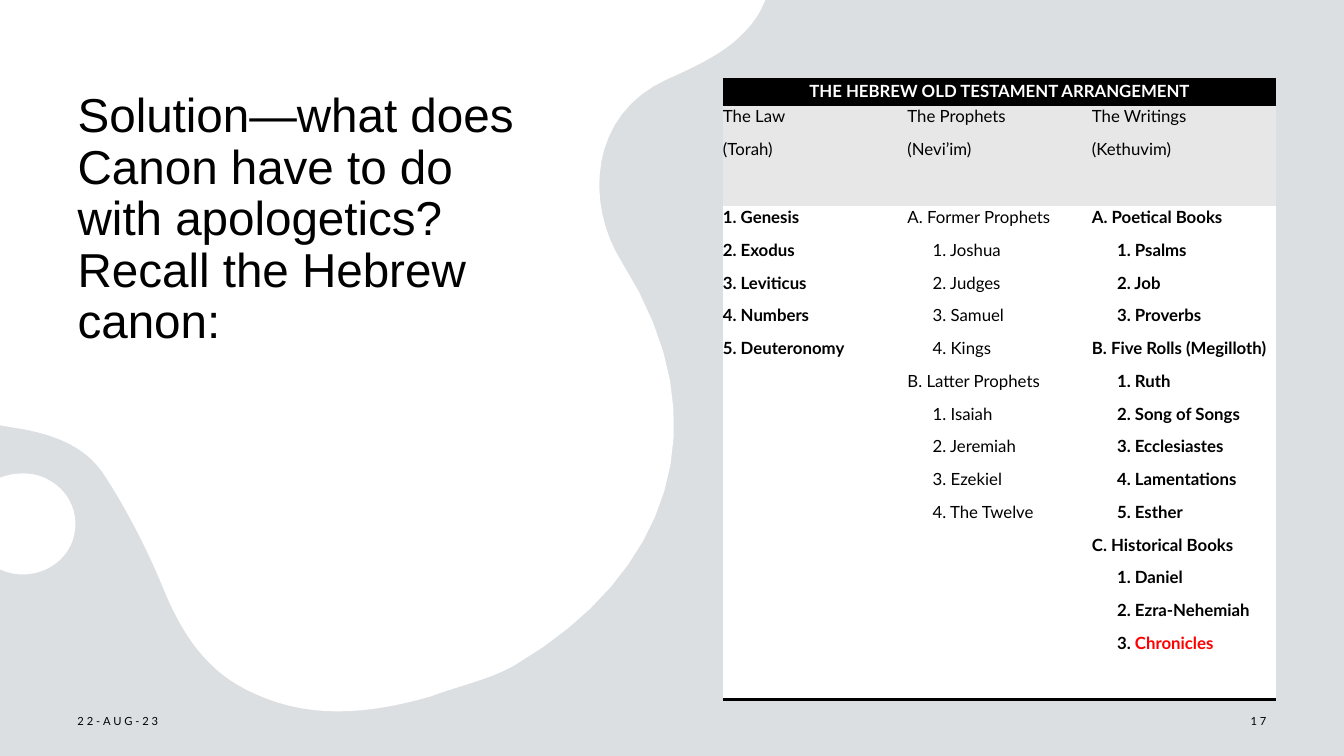
from lxml import etree
from pptx import Presentation
from pptx.dml.color import RGBColor
from pptx.enum.shapes import MSO_SHAPE
from pptx.enum.text import MSO_ANCHOR as ANCHOR, MSO_AUTO_SIZE as AUTO, PP_ALIGN as ALIGN
from pptx.oxml.ns import qn
from pptx.util import Pt

PX = 9144
W, H = 1333, 750
COLORS = {
    "ground": "E2E5E8", "veil": "AEAEAE", "white": "FFFFFF",
    "black": "000000", "band": "E7E7E7", "red": "FF0000",
}
NO_STYLE = "{2D5ABB26-0587-4C30-8999-92F81FD0307C}"

BLOB = [
    (0, 0), (759, 0), (754, 11),
    (750, 18, 745, 25, 739, 31), (720, 52, 690, 66, 663, 78),
    (583, 113, 581, 203, 616, 259), (720, 422, 661, 571, 512, 659),
    (487, 674, 456, 680, 427, 691), (364, 709, 302, 715, 242, 683),
    (204, 663, 182, 630, 165, 591), (148, 549, 127, 507, 102, 469),
    (84, 443, 55, 432, 24, 426), (0, 422),
]
DOT = [
    (18, 470), (29, 469, 39, 471, 48, 476), (74, 490, 82, 521, 68, 545),
    (55, 566, 29, 575, 5, 567), (0, 565), (0, 474), (6, 472),
    (10, 471, 14, 470, 18, 470),
]
DIVISIONS = [
    ("The Law", "(Torah)", True, [
        (None, ["Genesis", "Exodus", "Leviticus", "Numbers", "Deuteronomy"]),
    ]),
    ("The Prophets", "(Nevi’im)", False, [
        ("Former Prophets", ["Joshua", "Judges", "Samuel", "Kings"]),
        ("Latter Prophets", ["Isaiah", "Jeremiah", "Ezekiel", "The Twelve"]),
    ]),
    ("The Writings", "(Kethuvim)", True, [
        ("Poetical Books", ["Psalms", "Job", "Proverbs"]),
        ("Five Rolls (Megilloth)",
         ["Ruth", "Song of Songs", "Ecclesiastes", "Lamentations", "Esther"]),
        ("Historical Books", ["Daniel", "Ezra-Nehemiah", "Chronicles"]),
    ]),
]


def emu(*lengths):
    return [round(n * PX) for n in lengths]


def rgb(name):
    return RGBColor.from_string(COLORS[name])


def paint(s, name):
    s.fill.solid()
    s.fill.fore_color.rgb = rgb(name)
    s.line.fill.background()
    s.shadow.inherit = False


def add_run(p, text, size, color="black", bold=False, font="Lato"):
    r = p.add_run()
    r.text = text
    r.font.size, r.font.name, r.font.bold = Pt(size), font, bold
    r.font.color.rgb = rgb(color)
    return r


def flatten(outline, steps=16):
    points = [outline[0]]
    for seg in outline[1:]:
        if len(seg) == 2:
            points.append(seg)
            continue
        x0, y0 = points[-1]
        x1, y1, x2, y2, x3, y3 = seg
        for i in range(1, steps + 1):
            t = i / steps
            a, b, c, d = (1 - t) ** 3, 3 * t * (1 - t) ** 2, 3 * t * t * (1 - t), t ** 3
            points.append((a * x0 + b * x1 + c * x2 + d * x3,
                           a * y0 + b * y1 + c * y2 + d * y3))
    return [emu(*pt) for pt in points]


def add_backdrop(slide, x, y, w, h):
    slide.background.fill.solid()
    slide.background.fill.fore_color.rgb = rgb("ground")
    veil = slide.shapes.add_shape(MSO_SHAPE.RECTANGLE, *emu(x, y, w, h))
    paint(veil, "veil")
    color = veil.fill._xPr.find(qn("a:solidFill"))[0]
    etree.SubElement(color, qn("a:alpha")).set("val", "10000")
    blob, dot = flatten(BLOB), flatten(DOT)
    builder = slide.shapes.build_freeform(*blob[0])
    builder.add_line_segments(blob[1:])
    builder.move_to(*dot[0])
    builder.add_line_segments(dot[1:])
    paint(builder.convert_to_shape(*emu(x, y)), "white")


def add_title(slide, x, y, w, h):
    s = slide.shapes.title
    s.left, s.top, s.width, s.height = emu(x, y, w, h)
    tf = s.text_frame
    tf.word_wrap, tf.auto_size, tf.vertical_anchor = True, AUTO.NONE, ANCHOR.BOTTOM
    p = tf.paragraphs[0]
    p.alignment, p.line_spacing, p.space_before = ALIGN.LEFT, 0.9, Pt(0)
    add_run(p, "Solution—what does Canon have to do with apologetics? "
               "Recall the Hebrew canon:", 34, font="Arial")


def add_footer(slide, x, y, w, h):
    for text, left, width, align in [("22-AUG-23", x, 300, ALIGN.LEFT),
                                     ("17", x + w - 158, 158, ALIGN.RIGHT)]:
        tf = slide.shapes.add_textbox(*emu(left, y, width, h)).text_frame
        tf.word_wrap, tf.vertical_anchor = True, ANCHOR.MIDDLE
        p = tf.paragraphs[0]
        p.alignment, p.space_after = align, Pt(6)
        r = add_run(p, text, 8)
        r.font._element.set("spc", "200")


def style_cell(cell, fill, borders=()):
    cell.margin_left = cell.margin_right = cell.margin_top = cell.margin_bottom = 0
    cell.fill.solid()
    cell.fill.fore_color.rgb = rgb(fill)
    tcPr = cell._tc.get_or_add_tcPr()
    for i, side in enumerate(borders):
        ln = etree.Element(qn("a:ln" + side), w=str(Pt(2)))
        solid = etree.SubElement(ln, qn("a:solidFill"))
        etree.SubElement(solid, qn("a:srgbClr"), val=COLORS["black"])
        tcPr.insert(i, ln)


def add_line(cell, parts, bold=False, indent=0, align=ALIGN.JUSTIFY):
    tf = cell.text_frame
    p = tf.paragraphs[0] if not tf.paragraphs[0].runs else tf.add_paragraph()
    p.alignment, p.line_spacing, p.space_after = align, 1.07, Pt(8)
    if indent:
        p._p.get_or_add_pPr().set("marL", str(indent * PX))
    for text, color in parts:
        add_run(p, text, 12, color, bold)


def add_books(cell, groups, bold):
    for letter, (heading, books) in zip("ABC", groups):
        if heading:
            add_line(cell, [(f"{letter}. {heading}", "black")], bold)
        for n, book in enumerate(books, 1):
            color = "red" if book == "Chronicles" else "black"
            add_line(cell, [(f"{n}. ", "black"), (book, color)], bold,
                     25 if heading else 0)


def add_canon_table(slide, x, y, w, h):
    heights = [25, 100, h - 125]
    table = slide.shapes.add_table(3, 3, *emu(x, y, w, h)).table
    table.first_row = table.horz_banding = False
    table._tbl.tblPr.find(qn("a:tableStyleId")).text = NO_STYLE
    for row, height in zip(table.rows, heights):
        row.height = height * PX
    banner = table.cell(0, 0)
    banner.merge(table.cell(0, 2))
    add_line(banner, [("THE HEBREW OLD TESTAMENT ARRANGEMENT", "white")], True,
             align=ALIGN.CENTER)
    for c, (name, hebrew, bold, groups) in enumerate(DIVISIONS):
        table.columns[c].width = w * PX // 3
        top, head, body = (table.cell(i, c) for i in range(3))
        style_cell(top, "black", "TB")
        style_cell(head, "band")
        style_cell(body, "white", "B")
        for text in (name, hebrew):
            add_line(head, [(text, "black")])
        add_books(body, groups, bold)


def main():
    prs = Presentation()
    prs.slide_width, prs.slide_height = emu(W, H)
    slide = prs.slides.add_slide(prs.slide_layouts[5])
    add_backdrop(slide, 0, 0, W, H)
    add_title(slide, 67, 73, 470, 278)
    add_footer(slide, 67, 695, 1199, 40)
    add_canon_table(slide, 717, 79, 549, 615)
    title = slide.shapes.title._element
    title.getparent().append(title)
    prs.save("out.pptx")


if __name__ == "__main__":
    main()
